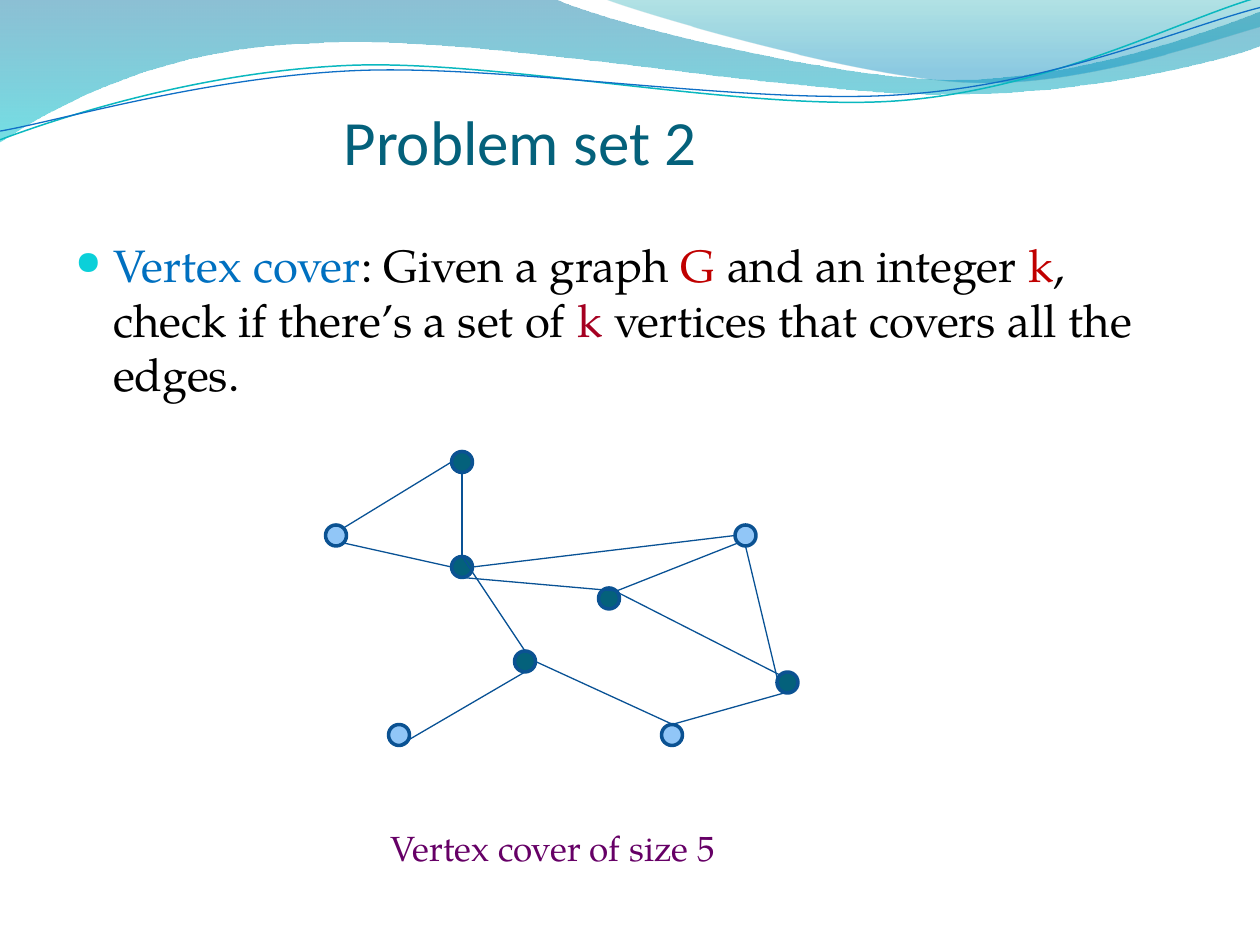
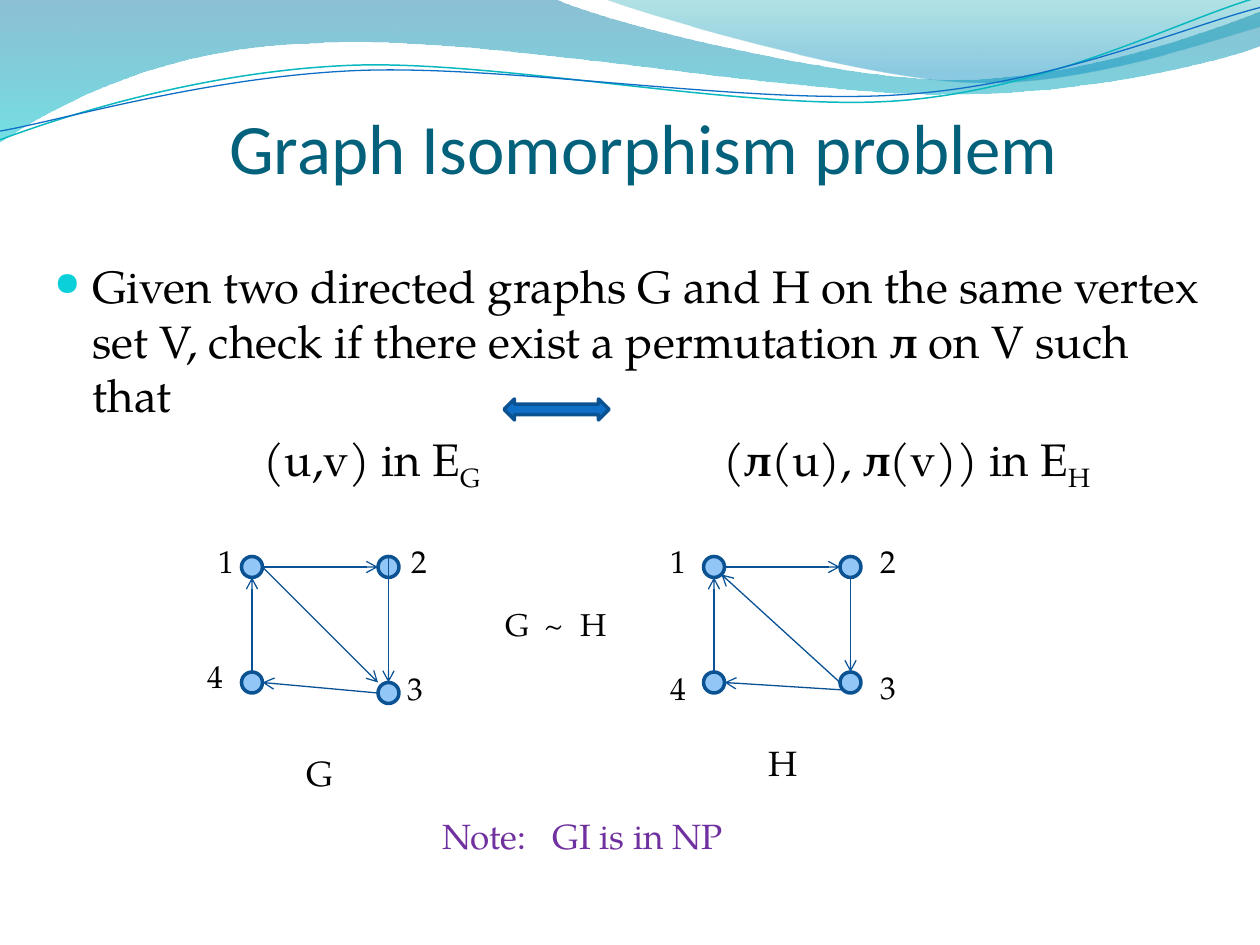
import pptx
import pptx.dml.color
import pptx.enum.shapes
import pptx.enum.text
import pptx.oxml.ns
import pptx.util
from lxml import etree

Pt = pptx.util.Pt
Shape = pptx.enum.shapes.MSO_SHAPE
AutoSize = pptx.enum.text.MSO_AUTO_SIZE

TITLE_FONT, TEXT_FONT = "Calibri", "TeX Gyre Pagella"
TEAL, BLACK, PLAIN = "04617B", "000000", "91C6F7"
OUTLINE, EDGE, ARROW = "0B5292", "095295", "0F6FC6"
DIAMETER = 12
DIAGONAL = 0.71
SIDES = {
    "n": (0, -1), "s": (0, 1), "w": (-1, 0), "e": (1, 0),
    "nw": (-DIAGONAL, -DIAGONAL), "ne": (DIAGONAL, -DIAGONAL),
    "sw": (-DIAGONAL, DIAGONAL), "se": (DIAGONAL, DIAGONAL),
    "corner": (-1, -1),
}

BANDS = [
    ((0, 0), [
        (316.8, -0.7),
        (342.7, 12.2, 478.1, 45.4, 545.8, 45.4),
        (614.2, 45.4, 689.8, 18.7, 720, 6.5),
        (720.7, 25.9),
        (707.8, 31.7, 626.4, 54.7, 537.1, 54),
        (447.8, 54, 275, 20.2, 185, 24.5),
        (92.9, 25.9, 33.1, 59.8, -0.7, 81.4),
    ], [(0, "0074A1", 45), (1, "00C6CF", 55)]),
    ((344.9, -0.7), [
        (366.5, 7.9, 491, 44.6, 553.7, 46.8),
        (616.3, 49.7, 691.9, 23, 720, 15.1),
        (720, 0),
    ], [(0, "00A1A9", 30), (0.8, "008BBF", 45)]),
]
STRANDS = [
    ((0, 79.9), [
        (34.6, 67, 113.8, 41, 199.4, 37.4),
        (284.4, 33.8, 427, 64.1, 513.4, 57.6),
        (599.8, 51.1, 675.4, 10.8, 718.6, -1.4),
    ], "0AB8BF", 0.85),
    ((0, 74.9), [
        (33.8, 69.1, 118.1, 43.9, 203.8, 40.3),
        (290.2, 36.7, 430.6, 60.5, 516.2, 54),
        (601.9, 48.2, 677.5, 15.1, 720, 4.3),
    ], "0F6FC6", 0.75),
]

COVER_VERTICES = {
    "left": (6, 48), "top": (78, 6), "hub": (78, 66),
    "low left": (42, 162), "low right": (198, 162), "centre": (114, 120),
    "right": (264, 132), "middle": (162, 84), "high right": (240, 48),
}
COVER = {"top", "hub", "centre", "right", "middle"}
COVER_EDGES = [
    ("left", "se", "hub", "w"), ("top", "s", "hub", "n"),
    ("left", "ne", "top", "w"), ("hub", "e", "high right", "w"),
    ("hub", "s", "middle", "ne"), ("middle", "ne", "high right", "sw"),
    ("low left", "s", "centre", "s"), ("hub", "n", "centre", "n"),
    ("centre", "e", "low right", "ne"), ("middle", "n", "right", "nw"),
    ("high right", "s", "right", "sw"), ("low right", "n", "right", "se"),
]
G_VERTICES = {"1": (6, 6), "2": (84, 6), "3": (84, 78), "4": (6, 72)}
H_VERTICES = {**G_VERTICES, "3": (84, 72)}
SHARED_EDGES = [("1", "e", "2", "w"), ("4", "n", "1", "s")]
G_EDGES = SHARED_EDGES + [
    ("3", "w", "4", "e"), ("2", "n", "3", "n"), ("1", "e", "3", "corner")]
H_EDGES = SHARED_EDGES + [
    ("2", "s", "3", "n"), ("3", "sw", "4", "e"), ("3", "w", "1", "se")]
G_LABELS = {"1": (-20, -12, 20), "2": (90, -12, 23),
            "3": (88, 61, 23), "4": (-26.5, 54, 24.5)}
H_LABELS = {"1": (-26, -12, 20), "2": (94, -12, 23),
            "3": (94, 60, 23), "4": (-26, 61, 24.5)}


def rgb(code):
    return pptx.dml.color.RGBColor.from_string(code)


def add_xml(parent, tag, **attributes):
    return etree.SubElement(parent, pptx.oxml.ns.qn(tag), attributes)


def add_run(paragraph, text, size, color=BLACK, font=TEXT_FONT, bold=False, baseline=0):
    run = paragraph.add_run()
    run.text = text
    run.font.name, run.font.size, run.font.bold = font, Pt(size), bold
    run.font.color.rgb = rgb(color)
    if baseline:
        run.font._element.set("baseline", str(baseline * 1000))


def add_tabs(paragraph, stops):
    tabs = add_xml(paragraph._p.get_or_add_pPr(), "a:tabLst")
    for stop in stops:
        add_xml(tabs, "a:tab", pos=str(Pt(stop)), algn="l")


def add_bullet(paragraph):
    properties = paragraph._p.get_or_add_pPr()
    properties.set("marL", str(Pt(21.6)))
    properties.set("indent", str(Pt(-21.6)))
    add_xml(add_xml(properties, "a:buClr"), "a:srgbClr", val="0BD0D9")
    add_xml(properties, "a:buSzPct", val="72000")
    add_xml(properties, "a:buChar", char="●")


def add_label(slide, text, box, size, color=BLACK, wrap=True, tabs=()):
    frame = slide.shapes.add_textbox(*map(Pt, box)).text_frame
    frame.word_wrap = wrap
    frame.auto_size = AutoSize.SHAPE_TO_FIT_TEXT
    if tabs:
        add_tabs(frame.paragraphs[0], tabs)
    add_run(frame.paragraphs[0], text, size, color)


def add_statement(slide, box):
    frame = slide.shapes.add_textbox(*map(Pt, box)).text_frame
    frame.word_wrap = True
    frame.auto_size = AutoSize.NONE
    statement = frame.paragraphs[0]
    statement.space_before = Pt(5.2)
    return frame, statement


def add_condition(paragraph, parts):
    for text, bold, baseline in parts:
        add_run(paragraph, text, 26, bold=bold, baseline=baseline)


def trace(slide, start, segments, close):
    points = [pair for segment in segments for pair in zip(segment[::2], segment[1::2])]
    builder = slide.shapes.build_freeform(Pt(start[0]), Pt(start[1]), scale=1.0)
    builder.add_line_segments([(Pt(x), Pt(y)) for x, y in points], close=close)
    curve = builder.convert_to_shape()
    curve.shadow.inherit = False
    corners = iter(curve._element.xpath(".//a:lnTo"))
    for segment in segments:
        first = next(corners)
        if len(segment) == 6:
            first.tag = pptx.oxml.ns.qn("a:cubicBezTo")
            for _ in range(2):
                corner = next(corners)
                first.append(corner[0])
                corner.getparent().remove(corner)
    return curve


def add_waves(slide):
    waves = []
    for start, segments, stops in BANDS:
        band = trace(slide, start, segments, True)
        band.line.fill.background()
        band.fill.gradient()
        band.fill.gradient_angle = 270
        for stop, (position, color, _) in zip(band.fill.gradient_stops, stops):
            stop.position = position
            stop.color.rgb = rgb(color)
        for tint, (_, _, opacity) in zip(band._element.xpath(".//a:gs/a:srgbClr"), stops):
            add_xml(tint, "a:alpha", val=str(opacity * 1000))
        waves.append(band)
    for start, segments, color, width in STRANDS:
        strand = trace(slide, start, segments, False)
        strand.fill.background()
        strand.line.color.rgb = rgb(color)
        strand.line.width = Pt(width)
        waves.append(strand)
    return waves


def share_waves(slide):
    layout_tree = slide.slide_layout.shapes.element
    for place, wave in enumerate(add_waves(slide), start=2):
        layout_tree.insert(place, wave._element)


def start_slide(deck, title, box, inset, size):
    slide = deck.slides.add_slide(deck.slide_layouts[5])
    heading = slide.shapes.title
    heading.left, heading.top, heading.width, heading.height = map(Pt, box)
    frame = heading.text_frame
    frame.auto_size = AutoSize.NONE
    frame.vertical_anchor = pptx.enum.text.MSO_ANCHOR.BOTTOM
    frame.margin_left, frame.margin_top = Pt(inset), Pt(3.6)
    frame.margin_right, frame.margin_bottom = 0, Pt(0.5)
    frame.paragraphs[0].alignment = pptx.enum.text.PP_ALIGN.LEFT
    add_run(frame.paragraphs[0], title, size, TEAL, TITLE_FONT)
    return slide


def add_solid(slide, kind, box, color):
    solid = slide.shapes.add_shape(kind, *map(Pt, box))
    solid.shadow.inherit = False
    solid.fill.solid()
    solid.fill.fore_color.rgb = rgb(color)
    solid.line.color.rgb = rgb(OUTLINE)
    solid.line.width = Pt(2)


def add_graph(slide, left, top, vertices, edges, chosen=(), directed=False):
    radius = DIAMETER / 2

    def end(vertex, side):
        (x, y), (dx, dy) = vertices[vertex], SIDES[side]
        return Pt(left + x + dx * radius), Pt(top + y + dy * radius)

    for vertex, (x, y) in vertices.items():
        box = left + x - radius, top + y - radius, DIAMETER, DIAMETER
        add_solid(slide, Shape.OVAL, box, TEAL if vertex in chosen else PLAIN)
    for source, source_side, target, target_side in edges:
        edge = slide.shapes.add_connector(
            pptx.enum.shapes.MSO_CONNECTOR.STRAIGHT,
            *end(source, source_side), *end(target, target_side))
        edge.line.color.rgb = rgb(EDGE)
        edge.line.width = Pt(0.75)
        if directed:
            add_xml(edge.line._get_or_add_ln(), "a:tailEnd", type="arrow")
        add_xml(edge._element.spPr, "a:effectLst")


def add_named_graph(slide, name, left, top, vertices, edges, labels, name_top):
    add_graph(slide, left, top, vertices, edges, directed=True)
    for vertex, (x, y, width) in labels.items():
        add_label(slide, vertex, (left + x, top + y, width, 29), 18, wrap=False)
    add_label(slide, name, (left + 30, top + name_top, 36, 32), 20)


def build_vertex_cover(deck):
    slide = start_slide(deck, "Problem set 2", (36, 55.5, 684, 46.8), 160.3, 36)
    share_waves(slide)
    _, statement = add_statement(slide, (36, 132, 648, 366))
    add_bullet(statement)
    for text, color in [
        ("Vertex cover", "0070C0"), (": Given a graph ", BLACK), ("G", "C00000"),
        (" and an integer ", BLACK), ("k", "C00000"),
        (", check if there’s a set of ", BLACK), ("k", "A50021"),
        (" vertices that covers all the edges.", BLACK),
    ]:
        add_run(statement, text, 26, color)
    add_graph(slide, 186, 258, COVER_VERTICES, COVER_EDGES, COVER)
    add_label(slide, "Vertex cover of size 5", (216, 468.7, 222, 32), 20, "660066")


def build_isomorphism(deck):
    slide = start_slide(deck, "Graph Isomorphism problem", (30, 61.5, 684, 46.8), 100.9, 40.5)
    frame, statement = add_statement(slide, (24, 144, 678, 258))
    add_bullet(statement)
    add_run(statement, "Given two directed graphs G and H on the same vertex set V, "
            "check if there exist a permutation ", 26)
    add_run(statement, "л ", 26, bold=True)
    add_run(statement, "on V such that", 26)
    edge_in_g = frame.add_paragraph()
    edge_in_g.space_before = Pt(5.2)
    edge_in_g._p.get_or_add_pPr().set("marL", str(Pt(119.7)))
    add_condition(edge_in_g, [("(u,v) in E", False, 0), ("G", False, -25)])
    _, edge_in_h = add_statement(slide, (406.6, 242.6, 260, 45))
    add_condition(edge_in_h, [
        ("(", False, 0), ("л", True, 0), ("(u), ", False, 0), ("л", True, 0),
        ("(v)) in E", False, 0), ("H", False, -25)])
    add_solid(slide, Shape.LEFT_RIGHT_ARROW, (288, 228, 60, 12), ARROW)
    add_named_graph(slide, "G", 138, 318, G_VERTICES, G_EDGES, G_LABELS, 108)
    add_named_graph(slide, "H", 402, 318, H_VERTICES, H_EDGES, H_LABELS, 102)
    add_label(slide, "G\t~\tH", (282, 342, 72, 29), 18, tabs=[22, 42.5])
    add_label(slide, "Note:\tGI is in NP", (246, 462, 216, 32), 20, "7030A0", tabs=[62.6])


def main():
    deck = pptx.Presentation()
    deck.slide_width, deck.slide_height = Pt(720), Pt(540)
    build_vertex_cover(deck)
    build_isomorphism(deck)
    deck.save("out.pptx")


if __name__ == "__main__":
    main()
